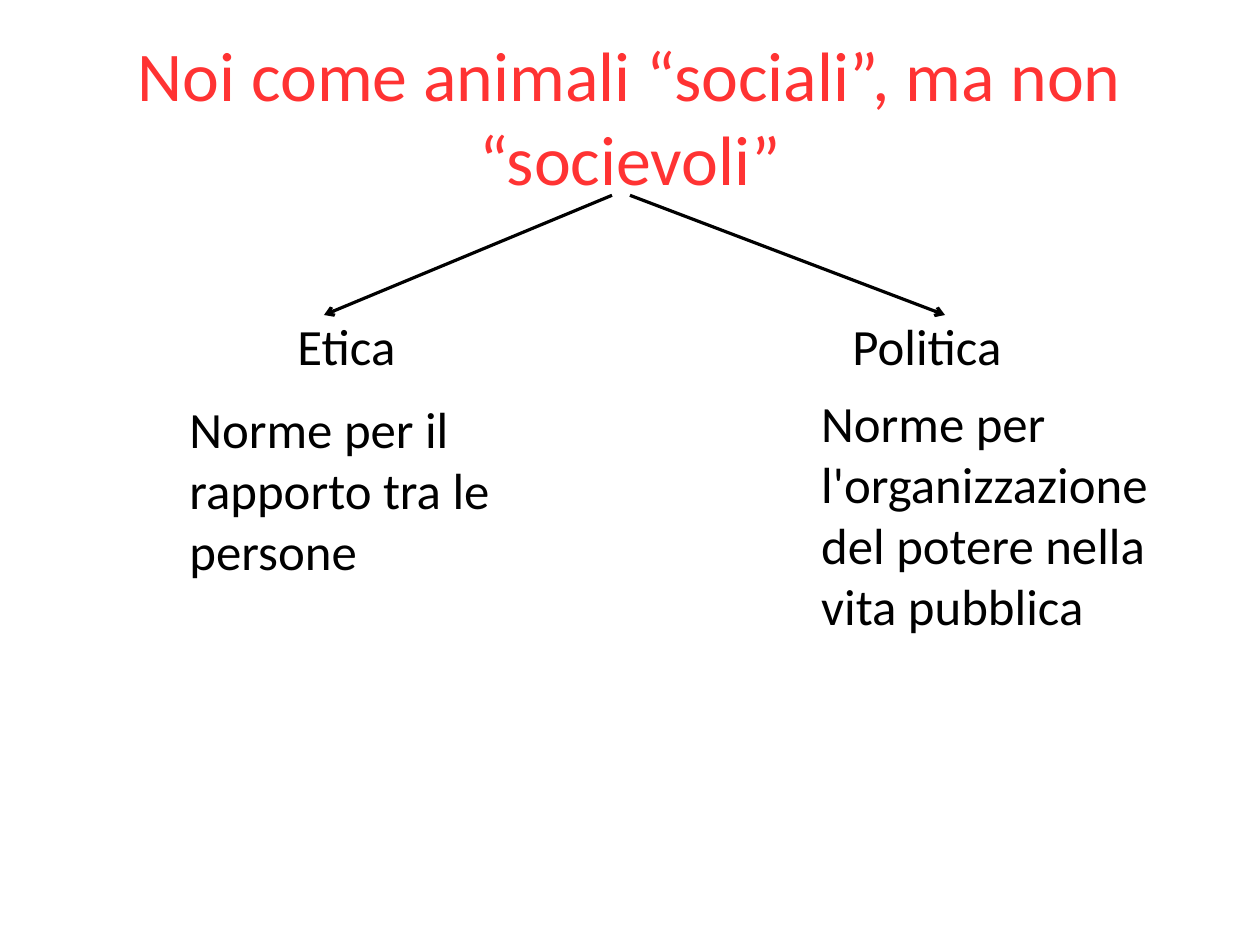
from lxml import etree
from pptx import Presentation
from pptx.dml.color import RGBColor
from pptx.enum.shapes import MSO_CONNECTOR
from pptx.enum.text import MSO_ANCHOR, PP_ALIGN
from pptx.oxml.ns import qn
from pptx.util import Cm, Pt

# Content: lengths in cm
COLORS = {"title": "FF3333", "text": "000000", "line": "000000"}
FONT = "Calibri"
TITLE = "Noi come animali “sociali”, ma non “socievoli”"
TITLE_BOX = (1.4, 0.81, 25.2, 3.53)
HEAD_TOP, HEAD_W, HEAD_H = 7, 12.3, 12.17
# heading, heading left, arrow start x, arrow end x, norm, norm box
BRANCHES = [
    ("Etica", 1.4, 13.6, 7.2,
     "Norme per il rapporto tra le persone", (3.96, 8.71, 7.4, 4.11)),
    ("Politica", 14.3, 14, 21,
     "Norme per l'organizzazione del potere nella vita pubblica",
     (18, 8.58, 7.9, 6.7)),
]


def add_text(slide, text, box, size, color, pad=(0, 0), align=PP_ALIGN.LEFT):
    shape = slide.shapes.add_textbox(*map(Cm, box))
    frame = shape.text_frame
    frame.word_wrap = True
    frame.margin_left = frame.margin_right = Cm(pad[0])
    frame.margin_top = frame.margin_bottom = Cm(pad[1])
    para = frame.paragraphs[0]
    para.text = text
    para.alignment = align
    para.font.name = FONT
    para.font.size = Pt(size)
    para.font.color.rgb = RGBColor.from_string(COLORS[color])
    return shape


def add_arrow(slide, start, end):
    arrow = slide.shapes.add_connector(
        MSO_CONNECTOR.STRAIGHT, *map(Cm, start + end))
    arrow.line.color.rgb = RGBColor.from_string(COLORS["line"])
    arrow.line.width = Pt(0)
    props = arrow.line._get_or_add_ln()
    etree.SubElement(props, qn("a:tailEnd"), type="arrow")
    etree.SubElement(arrow._element.spPr, qn("a:effectLst"))
    return arrow


def main():
    deck = Presentation()
    deck.slide_width, deck.slide_height = Cm(28), Cm(21)
    slide = deck.slides.add_slide(deck.slide_layouts[6])

    # Title
    title = add_text(slide, TITLE, TITLE_BOX, 44, "title",
                     align=PP_ALIGN.CENTER)
    title.text_frame.vertical_anchor = MSO_ANCHOR.MIDDLE
    middle = TITLE_BOX[0] + TITLE_BOX[2] / 2
    bottom = TITLE_BOX[1] + TITLE_BOX[3]

    # Branches: heading, arrow and norm
    for head, left, start, end, norm, box in BRANCHES:
        label = add_text(slide, head, (left, HEAD_TOP, HEAD_W, HEAD_H),
                         32, "text", align=PP_ALIGN.CENTER)
        indent = label.text_frame.paragraphs[0]._p.get_or_add_pPr()
        indent.set("marL", str(Cm(1.2)))
        indent.set("indent", str(Cm(-0.9)))
        arrow = add_arrow(slide, (start, bottom), (end, HEAD_TOP))
        if start == middle:
            arrow.begin_connect(title, 2)
        add_text(slide, norm, box, 32, "text", pad=(0.25, 0.13))

    deck.save("out.pptx")


if __name__ == "__main__":
    main()
